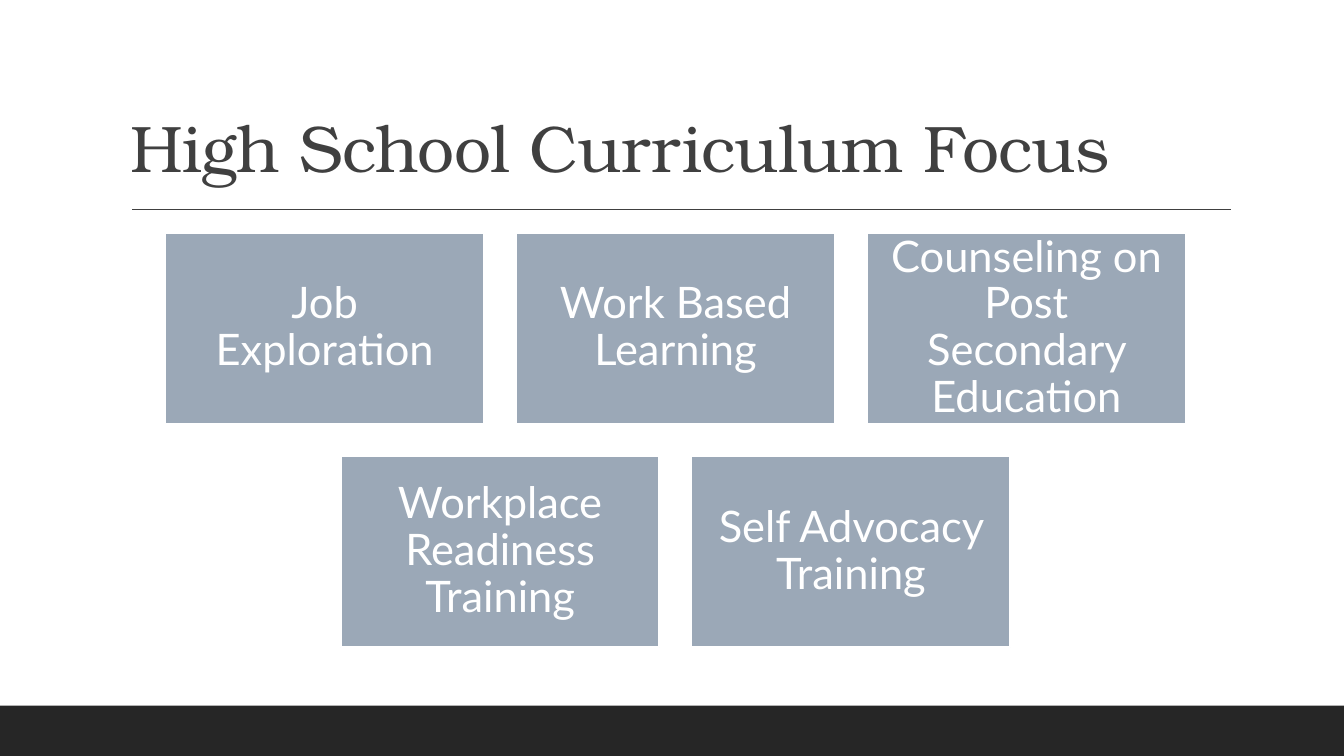
from pptx import Presentation
from pptx import util as u
from pptx.dml.color import RGBColor
from pptx.enum import shapes, text
from pptx.oxml.ns import qn
from lxml import etree

WIDE, HIGH = 13.33, 7.5
COLORS = {"ink": "404040", "band": "262626", "tile": "9BA8B7", "white": "FFFFFF"}
ROWS = [
    ["Job Exploration", "Work Based Learning",
     "Counseling on Post Secondary Education"],
    ["Workplace Readiness Training", "Self Advocacy Training"],
]


def color(name):
    return RGBColor.from_string(COLORS[name])


def inches(*sizes):
    return [u.Inches(size) for size in sizes]


def write(frame, words, size, font, tint, anchor, align):
    frame.word_wrap = True
    frame.vertical_anchor = anchor
    para = frame.paragraphs[0]
    para.alignment = align
    para.line_spacing = 0.9
    run = para.add_run()
    run.text = words
    run.font.size = u.Pt(size)
    run.font.name = font
    run.font.color.rgb = color(tint)
    return run


def add_rect(slide, box, fill):
    rect = slide.shapes.add_shape(shapes.MSO_SHAPE.RECTANGLE, *inches(*box))
    rect.shadow.inherit = False
    rect.fill.solid()
    rect.fill.fore_color.rgb = color(fill)
    rect.line.fill.background()
    return rect


def add_title(slide, box, words):
    """Title standing on the bottom of its box, with a rule below it."""
    left, top, width, height = box
    title = slide.shapes.add_textbox(*inches(*box))
    run = write(title.text_frame, words, 47, "TeX Gyre Bonum", "ink",
                text.MSO_ANCHOR.BOTTOM, text.PP_ALIGN.LEFT)
    run.font._element.set("spc", "-50")
    start, level = left + 0.11, top + height + 0.18
    rule = slide.shapes.add_connector(
        shapes.MSO_CONNECTOR.STRAIGHT,
        *inches(start, level, start + width - 0.1, level))
    rule.line.color.rgb = color("ink")
    rule.line.width = u.Pt(1)
    etree.SubElement(rule._element.spPr, qn("a:effectLst"))


def add_tile(slide, box, words):
    tile = add_rect(slide, box, "tile")
    tile.line.color.rgb = color("white")
    tile.line.width = u.Pt(1.25)
    frame = tile.text_frame
    frame.margin_left = frame.margin_right = u.Inches(0.13)
    frame.margin_top = frame.margin_bottom = u.Inches(0.13)
    write(frame, words, 31, "Lato", "white",
          text.MSO_ANCHOR.MIDDLE, text.PP_ALIGN.CENTER)


def add_tiles(slide, box, rows, gap=0.32):
    """Equal tiles in rows, each row centred in the box."""
    left, top, width, height = box
    most = max(len(row) for row in rows)
    wide = (width - gap * (most - 1)) / most
    high = (height - gap * (len(rows) - 1)) / len(rows)
    for i, row in enumerate(rows):
        start = left + (most - len(row)) * (wide + gap) / 2
        for j, words in enumerate(row):
            spot = (start + j * (wide + gap), top + i * (high + gap), wide, high)
            add_tile(slide, spot, words)


def main():
    deck = Presentation()
    deck.slide_width, deck.slide_height = inches(WIDE, HIGH)
    slide = deck.slides.add_slide(deck.slide_layouts[6])
    add_rect(slide, (0, HIGH - 0.5, WIDE, 0.5), "band")
    add_title(slide, (1.2, 0.31, 11, 1.59), "High School Curriculum Focus")
    add_tiles(slide, (1.64, 2.31, 10.12, 4.11), ROWS)
    deck.save("out.pptx")


if __name__ == "__main__":
    main()
